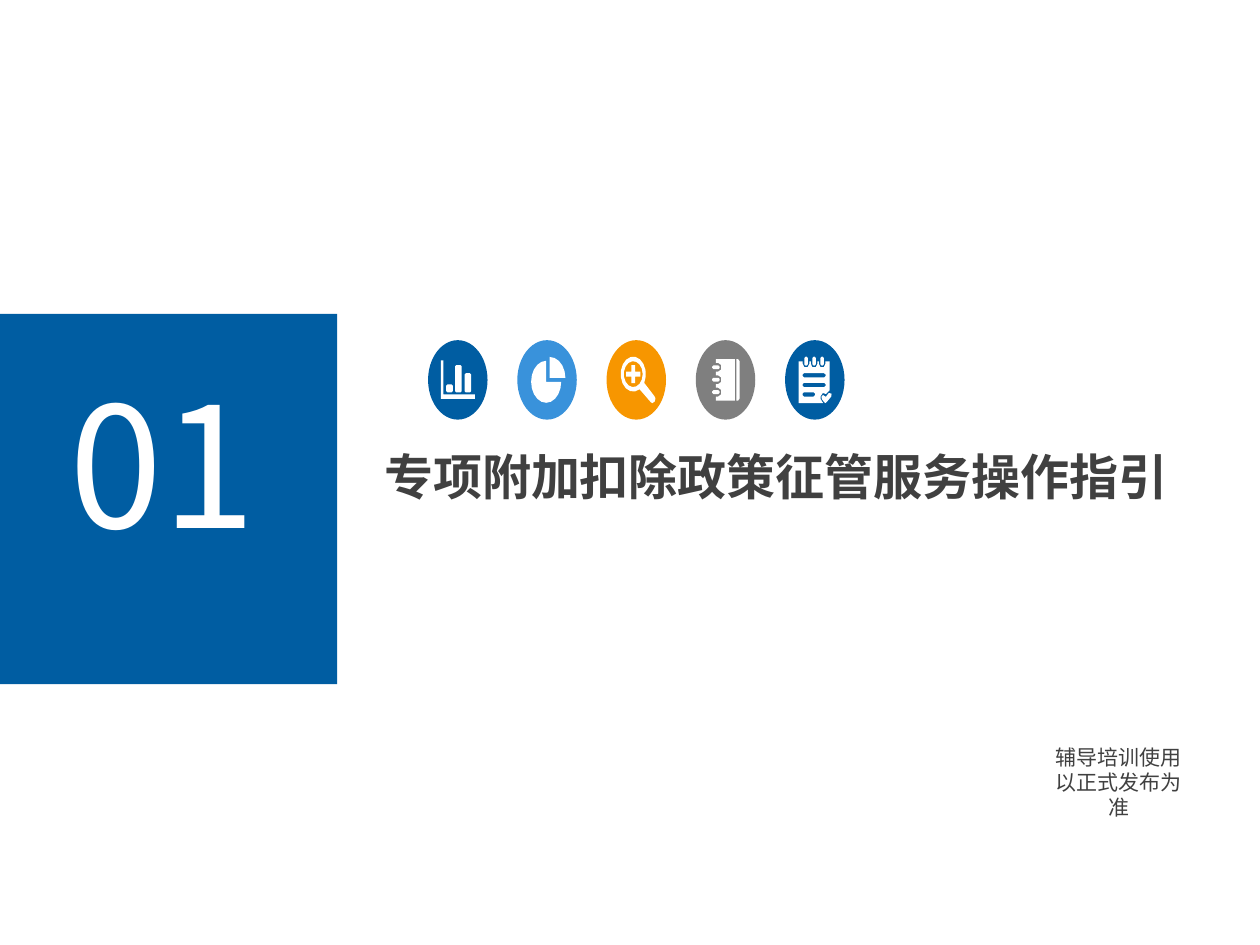
"""Build the section slide with a number panel, a title and five icon medallions."""
from dataclasses import dataclass
from math import cos, radians, sin

from lxml.etree import SubElement
from pptx import Presentation
from pptx.dml.color import RGBColor
from pptx.enum.shapes import MSO_SHAPE
from pptx.enum.text import MSO_ANCHOR, MSO_AUTO_SIZE, PP_ALIGN
from pptx.oxml.ns import qn
from pptx.util import Pt

FONT = "Noto Sans CJK SC"
COLORS = {
    "navy": "005DA2",
    "sky": "3992DB",
    "orange": "F79600",
    "gray": "7F7F7F",
    "ink": "404040",
    "white": "FFFFFF",
}
MEDALLION_LEFT, MEDALLION_TOP, MEDALLION_STEP = 244.6, 194.4, 51
MEDALLION_WIDTH, MEDALLION_HEIGHT = 34, 45.4
UNITS_PER_POINT = 100

Contour = list[tuple[float, float]]


@dataclass
class Label:
    lines: list[str]
    box: tuple[float, float, float, float]
    size: float
    color: str
    bold: bool = False
    alignment: PP_ALIGN = PP_ALIGN.LEFT


@dataclass
class Medallion:
    color: str
    contours: list[Contour]


def arc(x: float, y: float, rx: float, ry: float, start: float, end: float, step: float) -> Contour:
    steps = round(abs(end - start) / step)
    angles = [radians(start + (end - start) * i / steps) for i in range(steps + 1)]
    return [(x + rx * cos(a), y + ry * sin(a)) for a in angles]


def rounded(x: float, y: float, width: float, height: float, radius: float) -> Contour:
    right, bottom = x + width - radius, y + height - radius
    corners = [(right, bottom), (x + radius, bottom), (x + radius, y + radius), (right, y + radius)]
    return [
        point
        for i, (cx, cy) in enumerate(corners)
        for point in arc(cx, cy, radius, radius, 90 * i, 90 * i + 90, 90)
    ]


def bar_chart() -> list[Contour]:
    axes = [(7.3, 11.5), (8.8, 11.5), (8.8, 31), (26.8, 31), (26.8, 33.6), (7.3, 33.6)]
    bars = [(10.4, 25.2, 4.7), (15.5, 14.2, 15.7), (20.9, 18.9, 11)]
    return [axes] + [rounded(x, y, 3.8, height, 0.8) for x, y, height in bars]


def pie_chart() -> list[Contour]:
    return [
        [(18.5, 21.6)] + arc(18.5, 21.6, 9, 12, 270, 360, 18),
        [(16.5, 23.8)] + arc(16.5, 23.8, 8.6, 12, 0, 270, 18),
    ]


def magnifier() -> list[Contour]:
    x, y = 15.3, 19.4
    handle = [(27.4, 32), (28, 33.2), (27.6, 35), (26.2, 36), (25.2, 35.3)]
    plus = [
        (x + dx, y + dy)
        for dx, dy in [(-1, -5.2), (1, -5.2), (1, -1.4), (4, -1.4), (4, 1.4), (1, 1.4),
                       (1, 5.2), (-1, 5.2), (-1, 1.4), (-4, 1.4), (-4, -1.4), (-1, -1.4)]
    ]
    return [arc(x, y, 7.2, 10, 60, 390, 22) + handle, arc(x, y, 5.4, 7.4, 0, 360, 24), plus]


def notebook() -> list[Contour]:
    rings = [15.5, 22.6, 29.7]
    page = [(22.3, 10.8), (22.3, 34.6), (11.5, 34.6)]
    for y in reversed(rings):
        page += [(11.5, y + 2.5)] + arc(12.8, y, 2, 2.5, 90, -90, 60) + [(11.5, y - 2.5)]
    page.append((11.5, 10.8))
    spine = [(23.2, 10.8), (24.2, 10.8), (25, 12), (25, 33.4), (24.2, 34.6), (23.2, 34.6)]
    return [page, spine] + [rounded(9.3, y - 1.1, 4.4, 2.2, 0.8) for y in rings]


def checklist() -> list[Contour]:
    rings = [12, 16.6, 21.2]
    page = [(7.8, 12.2)]
    for x in rings:
        page += [(x - 1.9, 12.2)] + arc(x, 13.5, 1.9, 2.2, 180, 0, 60) + [(x + 1.9, 12.2)]
    page += [(25.5, 12.2), (25.5, 28.6), (23.4, 30.8), (21.6, 30.2), (20.4, 32), (20.4, 33.8),
             (21.8, 36), (7.8, 36)]
    heart = [(23.8, 35.4), (23, 36), (22.3, 35.4), (21.1, 33.8), (20.8, 32.4), (21.7, 31.3),
             (23.3, 32.4), (25, 30.2), (26.6, 30.6), (26.4, 32.3)]
    lines = [(18.9, 13.2), (24.4, 13.2), (29.8, 7.2)]
    return (
        [page, heart]
        + [rounded(x - 1, 9.4, 2, 5.2, 0.8) for x in rings]
        + [rounded(10, y, width, 2.4, 0.8) for y, width in lines]
    )


def paint(shape, color: str) -> None:
    shape.shadow.inherit = False
    shape.fill.solid()
    shape.fill.fore_color.rgb = RGBColor.from_string(COLORS[color])
    shape.line.fill.background()


def draw_medallion(slide, medallion: Medallion, left: float) -> None:
    group = slide.shapes.add_group_shape()
    disc = group.shapes.add_shape(
        MSO_SHAPE.OVAL, Pt(left), Pt(MEDALLION_TOP), Pt(MEDALLION_WIDTH), Pt(MEDALLION_HEIGHT)
    )
    paint(disc, medallion.color)
    placed = [
        [((left + x) * UNITS_PER_POINT, (MEDALLION_TOP + y) * UNITS_PER_POINT) for x, y in contour]
        for contour in medallion.contours
    ]
    builder = group.shapes.build_freeform(*placed[0][0], scale=Pt(1) / UNITS_PER_POINT)
    builder.add_line_segments(placed[0][1:], close=True)
    for contour in placed[1:]:
        builder.move_to(*contour[0])
        builder.add_line_segments(contour[1:], close=True)
    paint(builder.convert_to_shape(), "white")


def write_label(shape, label: Label) -> None:
    shape.left, shape.top, shape.width, shape.height = (Pt(value) for value in label.box)
    frame = shape.text_frame
    frame.word_wrap = True
    frame.auto_size = MSO_AUTO_SIZE.NONE
    frame.vertical_anchor = MSO_ANCHOR.TOP
    paragraph = frame.paragraphs[0]
    paragraph.alignment = label.alignment
    for index, line in enumerate(label.lines):
        if index:
            paragraph.add_line_break()
        run = paragraph.add_run()
        run.text = line
        run.font.name = FONT
        run.font.size = Pt(label.size)
        run.font.bold = label.bold
        run.font.color.rgb = RGBColor.from_string(COLORS[label.color])
        SubElement(run.font._element, qn("a:ea"), typeface=FONT)


def main() -> None:
    presentation = Presentation()
    presentation.slide_width, presentation.slide_height = Pt(720), Pt(540)
    slide = presentation.slides.add_slide(presentation.slide_layouts[5])

    panel = slide.shapes.add_shape(MSO_SHAPE.RECTANGLE, Pt(0), Pt(179.4), Pt(192.6), Pt(211.5))
    paint(panel, "navy")

    title = Label(["专项附加扣除政策征管服务操作指引"], (212.4, 251.3, 466.6, 41), 28, "ink", True)
    number = Label(["01"], (32.4, 202.3, 128.2, 123.8), 96, "white")
    note = Label(["辅导培训使用", "以正式发布为准"], (590.4, 421.9, 98, 36), 12, "ink",
                 alignment=PP_ALIGN.CENTER)
    write_label(slide.shapes.title, title)
    for label in (number, note):
        write_label(slide.shapes.add_textbox(*(Pt(value) for value in label.box)), label)

    medallions = [
        Medallion("navy", bar_chart()),
        Medallion("sky", pie_chart()),
        Medallion("orange", magnifier()),
        Medallion("gray", notebook()),
        Medallion("navy", checklist()),
    ]
    for index, medallion in enumerate(medallions):
        draw_medallion(slide, medallion, MEDALLION_LEFT + index * MEDALLION_STEP)

    presentation.save("out.pptx")


if __name__ == "__main__":
    main()
